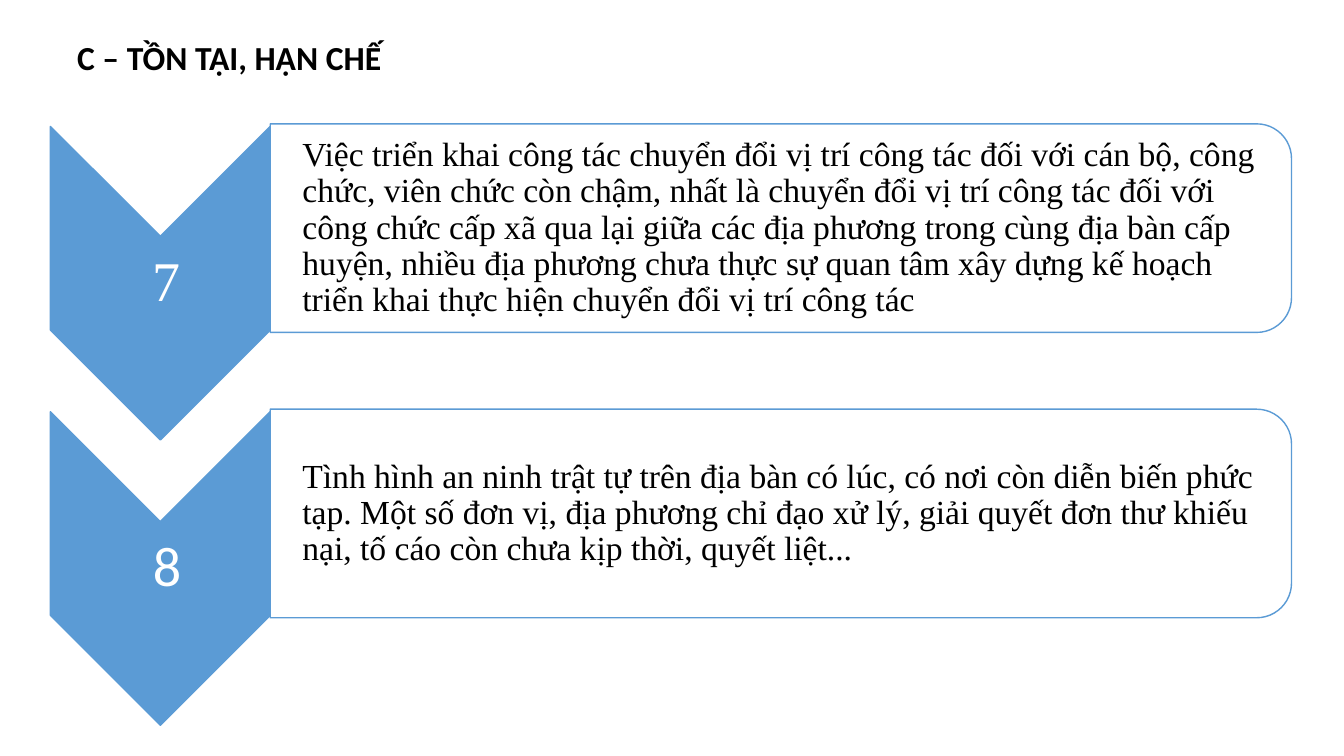
from lxml.etree import SubElement
from pptx import Presentation
from pptx.dml.color import RGBColor as RGB
from pptx.enum.shapes import MSO_SHAPE as SHAPE
from pptx.enum.text import MSO_ANCHOR as ANCHOR, PP_ALIGN as ALIGN
from pptx.oxml.ns import qn
from pptx.util import Pt

# Content
TITLE = "C – TỒN TẠI, HẠN CHẾ"
ITEMS = [
    ("7", "Times New Roman",
     "Việc triển khai công tác chuyển đổi vị trí công tác đối với cán bộ, công chức, "
     "viên chức còn chậm, nhất là chuyển đổi vị trí công tác đối với công chức cấp xã "
     "qua lại giữa các địa phương trong cùng địa bàn cấp huyện, nhiều địa phương chưa "
     "thực sự quan tâm xây dựng kế hoạch triển khai thực hiện chuyển đổi vị trí công tác"),
    ("8", "Calibri",
     "Tình hình an ninh trật tự trên địa bàn có lúc, có nơi còn diễn biến phức tạp. "
     "Một số đơn vị, địa phương chỉ đạo xử lý, giải quyết đơn thư khiếu nại, tố cáo "
     "còn chưa kịp thời, quyết liệt..."),
]

THEME = {
    "blue": RGB(0x5B, 0x9B, 0xD5), "white": RGB(255, 255, 255), "black": RGB(0, 0, 0),
    "title_font": "Calibri", "body_font": "Times New Roman",
    "title_size": 24, "number_size": 40, "body_size": 24,
}

# Layout in points
CHEVRON_LEFT, CHEVRON_W, CHEVRON_H = 36, 157, 224
PANEL_LEFT, PANEL_W, PANEL_H = CHEVRON_LEFT + CHEVRON_W, 729.5, 149
NUMBER_H, BODY_W, BODY_H = 67, 722, 134
CHEVRON_MID, PANEL_MID, PITCH = 202.3, 163, 203.8

prs = Presentation()
prs.slide_width, prs.slide_height = Pt(960), Pt(540)
s = prs.slides.add_slide(prs.slide_layouts[6])


def add_turned(kind, left, mid, w, h, fill):
    """Add a shape turned 90 degrees that covers w by h on the slide."""
    sp = s.shapes.add_shape(kind, Pt(left + (w - h) / 2), Pt(mid - w / 2), Pt(h), Pt(w))
    sp.rotation = 90
    sp.shadow.inherit = False
    sp.fill.solid()
    sp.fill.fore_color.rgb = fill
    sp.line.color.rgb = THEME["blue"]
    sp.line.width = Pt(1)
    return sp


def add_text(text, left, top, w, h, size, font, color, insets=(7.2, 3.6, 7.2, 3.6),
             anchor=ANCHOR.TOP, align=ALIGN.LEFT, spacing=1.0, bold=False):
    tf = s.shapes.add_textbox(Pt(left), Pt(top), Pt(w), Pt(h)).text_frame
    tf.word_wrap = True
    tf.vertical_anchor = anchor
    tf.margin_left, tf.margin_top, tf.margin_right, tf.margin_bottom = map(Pt, insets)
    p = tf.paragraphs[0]
    p.alignment, p.line_spacing = align, spacing
    r = p.add_run()
    r.text = text
    r.font.size, r.font.name, r.font.bold = Pt(size), font, bold
    r.font.color.rgb = color


# Numbered chevrons with their text panels
for i, (number, number_font, body) in enumerate(ITEMS):
    chevron_mid, panel_mid = CHEVRON_MID + i * PITCH, PANEL_MID + i * PITCH
    add_turned(SHAPE.CHEVRON, CHEVRON_LEFT, chevron_mid, CHEVRON_W, CHEVRON_H, THEME["blue"])
    add_text(number, CHEVRON_LEFT, chevron_mid - NUMBER_H / 2, CHEVRON_W, NUMBER_H,
             THEME["number_size"], number_font, THEME["white"], (11.5, 2, 2, 2),
             ANCHOR.MIDDLE, ALIGN.CENTER, 0.9)

    panel = add_turned(SHAPE.ROUND_2_SAME_RECTANGLE, PANEL_LEFT, panel_mid,
                       PANEL_W, PANEL_H, THEME["white"])
    fill_color = panel.fill._xPr.find(qn("a:solidFill"))[0]
    SubElement(fill_color, qn("a:alpha"), val="90000")
    add_text(body, PANEL_LEFT, panel_mid - BODY_H / 2, BODY_W, BODY_H,
             THEME["body_size"], THEME["body_font"], THEME["black"], (23, 1.5, 1.5, 1.5),
             ANCHOR.MIDDLE, spacing=0.9)

# Title
add_text(TITLE, 48, 22.5, 906.5, 36, THEME["title_size"], THEME["title_font"],
         THEME["black"], bold=True)

prs.save("out.pptx")
